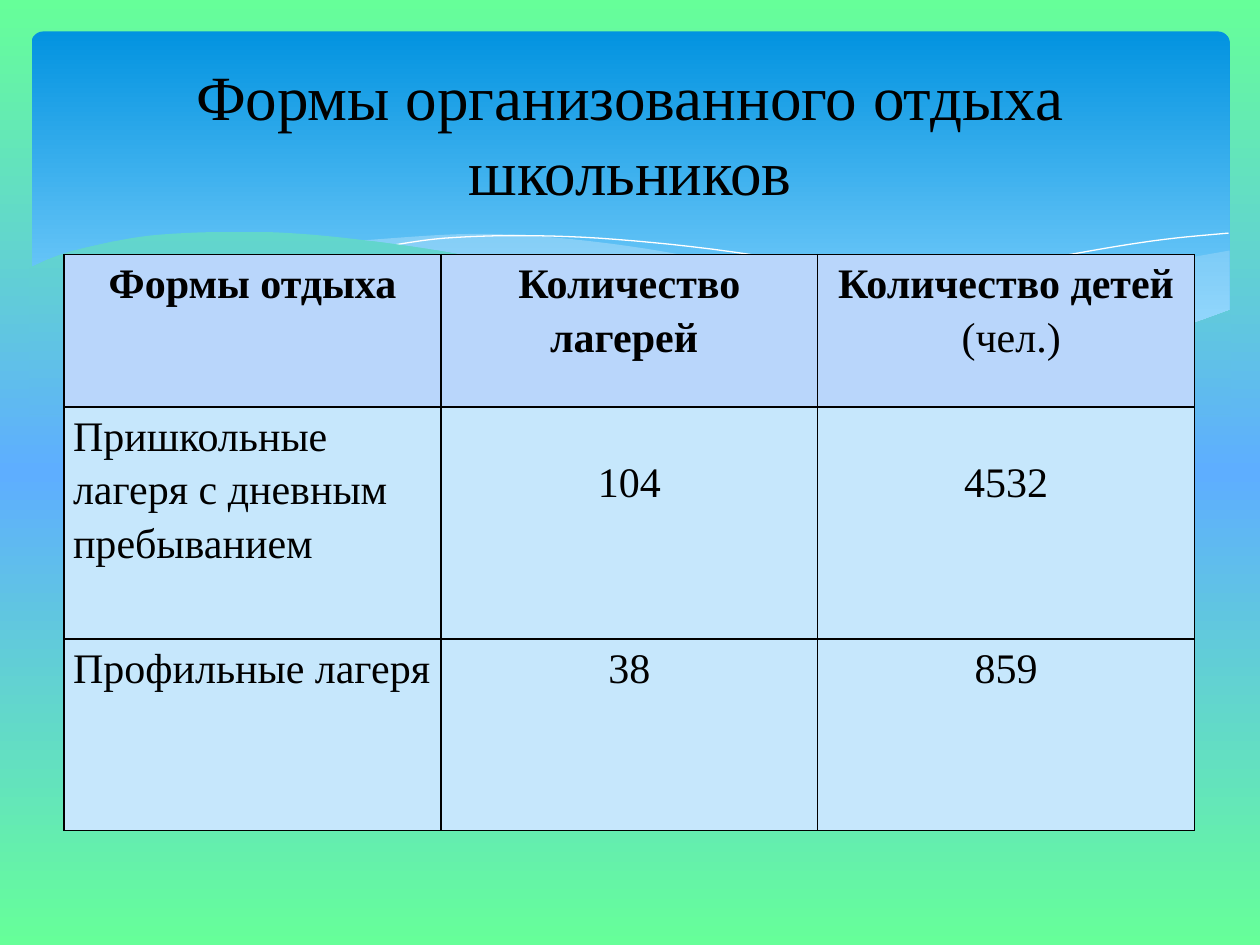
from lxml.etree import SubElement
from pptx import Presentation
from pptx.dml.color import RGBColor as RGB
from pptx.enum.shapes import MSO_SHAPE as SHAPE
from pptx.enum.text import MSO_ANCHOR as ANCHOR, PP_ALIGN as ALIGN
from pptx.oxml.ns import qn
from pptx.util import Inches, Pt

UNIT = Inches(0.01)  # the slide is a grid of 1000 columns by 750 rows
COLS, ROWS = 1000, 750
BLACK = RGB(0x00, 0x00, 0x00)
WHITE = RGB(0xFF, 0xFF, 0xFF)
GREEN = RGB(0x66, 0xFF, 0x99)
BLUE = RGB(0x5E, 0xAE, 0xFF)
PANEL_TOP = RGB(0x02, 0x93, 0xE0)
PANEL_END = RGB(0x83, 0xD3, 0xFE)
HEADER = RGB(0xB9, 0xD6, 0xFB)
PALE = RGB(0xC6, 0xE7, 0xFC)

# Knots of the wave curves, in grid units
RIGHT_TOP = [(975, 199), (921, 209), (861, 223), (779, 242), (706, 257), (661, 265)]
RIGHT_BASE = [(661, 265), (718, 271), (781, 277), (844, 277), (897, 270),
              (942, 259), (976, 247)]
MIDDLE_TOP = [(893, 273), (807, 260), (706, 240), (629, 222), (555, 205),
              (489, 194), (420, 187), (361, 186), (286, 191)]
MIDDLE_BASE = [(286, 191), (362, 203), (449, 222), (530, 240), (618, 258),
               (695, 270), (773, 277), (838, 278), (893, 273)]
LONG_LINE = [(309, 195), (353, 189), (416, 187), (489, 190), (582, 200),
             (695, 219), (795, 241), (907, 272)]
SHORT_LINE = [(613, 257), (695, 235), (776, 216), (866, 199), (924, 190), (975, 185)]
FRONT_TOP = [(977, 246), (930, 262), (875, 273), (809, 277), (726, 272),
             (626, 258), (529, 239), (447, 220), (365, 202), (292, 191),
             (230, 185), (177, 184), (119, 187), (75, 195), (46, 203), (23, 213)]
FRONT_BASE = [(23, 329), (977, 329)]

TABLE = [
    [[("Формы отдыха", True)], [("Количество лагерей ", True)],
     [("Количество детей", True), (" (чел.)", False)]],
    [[("Пришкольные лагеря с дневным пребыванием", False)],
     [("104", False)], [("4532", False)]],
    [[("Профильные лагеря", False)], [("38", False)], [("859", False)]],
]


def mix(a, b, share):
    return RGB(*(round(x + (y - x) * share) for x, y in zip(a, b)))


def smooth(knots, steps=6):
    """Points of a Catmull-Rom curve through the knots."""
    ext = [knots[0], *knots, knots[-1]]
    points = [knots[0]]
    for p0, p1, p2, p3 in zip(ext, ext[1:], ext[2:], ext[3:]):
        for t in (i / steps for i in range(1, steps + 1)):
            points.append(tuple(
                (2 * b + (c - a) * t + (2 * a - 5 * b + 4 * c - d) * t ** 2
                 + (3 * b - a - 3 * c + d) * t ** 3) / 2
                for a, b, c, d in zip(p0, p1, p2, p3)))
    return points


class Deck:
    font = {"name": "Times New Roman"}

    def __init__(self):
        self.prs = Presentation()
        self.prs.slide_width, self.prs.slide_height = COLS * UNIT, ROWS * UNIT
        self.s = self.prs.slides.add_slide(self.prs.slide_layouts[5])

    def gradient(self, fill, element, stops):
        """Fill from top to bottom with (percent, colour) stops."""
        fill.gradient()
        fill.gradient_angle = 270
        gs_list = element.xpath(".//a:gsLst")[0]
        for old in list(gs_list):
            gs_list.remove(old)
        for percent, color in stops:
            gs = SubElement(gs_list, qn("a:gs"), pos=str(percent * 1000))
            SubElement(gs, qn("a:srgbClr"), val=str(color))

    def background(self, stops):
        self.gradient(self.s.background.fill, self.s.element, stops)

    def panel(self, x, y, w, h, stops):
        box = [v * UNIT for v in (x, y, w, h)]
        sp = self.s.shapes.add_shape(SHAPE.ROUNDED_RECTANGLE, *box)
        sp.adjustments[0] = 0.034
        sp.shadow.inherit = False
        sp.line.fill.background()
        self.gradient(sp.fill, sp.element, stops)

    def outline(self, points, close):
        builder = self.s.shapes.build_freeform(
            *(round(v * UNIT) for v in points[0]), scale=1.0)
        builder.add_line_segments(
            [(x * UNIT, y * UNIT) for x, y in points[1:]], close=close)
        sp = builder.convert_to_shape()
        sp.shadow.inherit = False
        return sp

    def wave(self, points, color=None, opacity=100, stops=None):
        sp = self.outline(points, close=True)
        sp.line.fill.background()
        if stops:
            self.gradient(sp.fill, sp.element, stops)
            return
        sp.fill.solid()
        sp.fill.fore_color.rgb = color
        rgb = sp.element.spPr.xpath("./a:solidFill/a:srgbClr")[0]
        SubElement(rgb, qn("a:alpha"), val=str(opacity * 1000))

    def curve(self, points):
        sp = self.outline(points, close=False)
        sp.fill.background()
        sp.line.color.rgb = WHITE
        sp.line.width = 0

    def add_text(self, p, text, size, bold=False):
        r = p.add_run()
        r.text = text
        for name, value in {**self.font, "size": Pt(size), "bold": bold}.items():
            setattr(r.font, name, value)
        r.font.color.rgb = BLACK

    def title(self, text, x, y, w, h):
        sp = self.s.shapes.title
        box = {"left": x, "top": y, "width": w, "height": h}
        for name, value in box.items():
            setattr(sp, name, value * UNIT)
        self.s.shapes.element.append(sp.element)  # in front of the waves
        tf = sp.text_frame
        tf.word_wrap = True
        tf.vertical_anchor = ANCHOR.MIDDLE
        p = tf.paragraphs[0]
        p.alignment = ALIGN.CENTER
        self.add_text(p, text, 36)

    def table(self, rows, x, y, col_width, heights):
        n = len(rows[0])
        box = [v * UNIT for v in (x, y, col_width * n, sum(heights))]
        table = self.s.shapes.add_table(len(rows), n, *box).table
        for column in table.columns:
            column.width = col_width * UNIT
        for i, (row, height) in enumerate(zip(rows, heights)):
            table.rows[i].height = height * UNIT
            for j, lines in enumerate(row):
                number_drop = 37 if i == 1 and j else 0
                self.cell(table.cell(i, j), lines, HEADER if i == 0 else PALE,
                          ALIGN.LEFT if i and not j else ALIGN.CENTER, number_drop)

    def cell(self, cell, lines, color, align, top):
        margins = {"left": 7, "right": 7, "top": top, "bottom": 0}
        for side, value in margins.items():
            setattr(cell, f"margin_{side}", value * UNIT)
        tc_pr = cell._tc.get_or_add_tcPr()
        for edge in ("lnL", "lnR", "lnT", "lnB"):
            ln = SubElement(tc_pr, qn(f"a:{edge}"), w=str(Pt(1)))
            SubElement(SubElement(ln, qn("a:solidFill")), qn("a:srgbClr"), val=str(BLACK))
        cell.fill.solid()
        cell.fill.fore_color.rgb = color
        tf = cell.text_frame
        for k, (text, bold) in enumerate(lines):
            p = tf.add_paragraph() if k else tf.paragraphs[0]
            p.alignment = align
            p.line_spacing = 1.15
            self.add_text(p, text, 24, bold)


def main():
    deck = Deck()
    deck.background([(0, GREEN), (50, BLUE), (100, GREEN)])
    deck.panel(25, 25, 951, 270, [(0, PANEL_TOP), (90, PANEL_END), (100, PANEL_END)])
    deck.wave(smooth(RIGHT_TOP) + smooth(RIGHT_BASE) + [(976, 199)], PALE, 29)
    deck.wave(smooth(MIDDLE_TOP) + smooth(MIDDLE_BASE), PALE, 40)
    deck.curve(smooth(LONG_LINE))
    deck.curve(smooth(SHORT_LINE))
    # The front wave continues the colours of the background behind it
    top, base = (mix(GREEN, BLUE, y / (ROWS / 2)) for y in (184, 329))
    deck.wave(smooth(FRONT_TOP) + FRONT_BASE, stops=[(0, top), (100, base)])
    deck.title("Формы организованного отдыха школьников", 50, 37, 900, 137)
    deck.table(TABLE, 51, 202, 299, [121, 184, 152])
    deck.prs.save("out.pptx")


if __name__ == "__main__":
    main()
